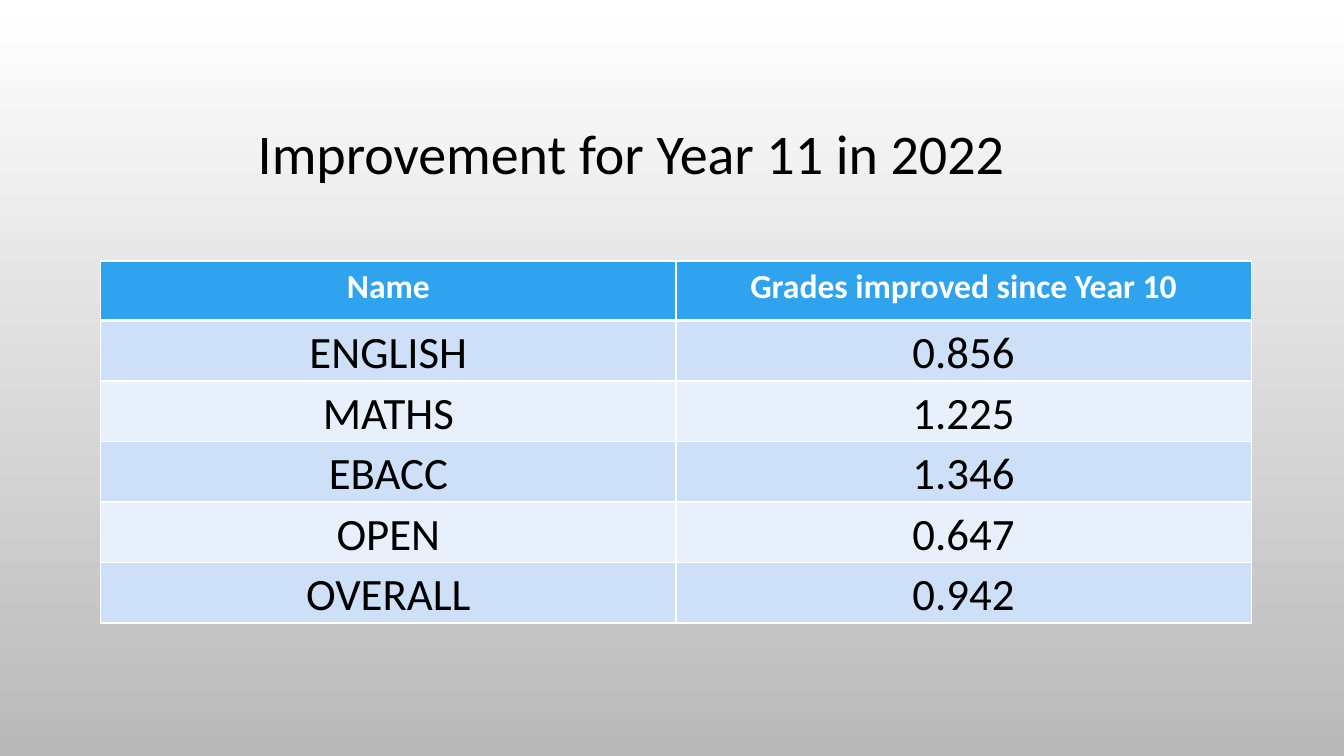
from lxml import etree
from pptx import Presentation
from pptx.dml.color import RGBColor
from pptx.enum import text as t
from pptx.oxml import ns
from pptx.util import Inches, Pt

TITLE = "Improvement for Year 11 in 2022"
ROWS = [
    ("Name", "Grades improved since Year 10"),
    ("ENGLISH", "0.856"),
    ("MATHS", "1.225"),
    ("EBACC", "1.346"),
    ("OPEN", "0.647"),
    ("OVERALL", "0.942"),
]
WHITE = RGBColor(0xFF, 0xFF, 0xFF)
GREY = RGBColor(0xB9, 0xB9, 0xB9)
BLACK = RGBColor(0, 0, 0)
BLUE = RGBColor(0x2F, 0xA3, 0xEE)
BANDS = [RGBColor(0xE8, 0xF0, 0xFC), RGBColor(0xCD, 0xE0, 0xF8)]


def write(frame, words, size, color=BLACK, bold=False):
    para = frame.paragraphs[0]
    para.alignment = t.PP_ALIGN.CENTER
    run = para.add_run()
    run.text = words
    font = run.font
    font.name, font.size, font.bold = "Calibri", Pt(size), bold
    font.color.rgb = color


def edge(cell, side, width):
    props = cell._tc.get_or_add_tcPr()
    line = etree.SubElement(props, ns.qn("a:ln" + side), w=str(Pt(width)))
    fill = etree.SubElement(line, ns.qn("a:solidFill"))
    etree.SubElement(fill, ns.qn("a:srgbClr"), val=str(WHITE))


deck = Presentation()
deck.slide_width, deck.slide_height = Inches(13.33), Inches(7.5)
slide = deck.slides.add_slide(deck.slide_layouts[6])

back = slide.background.fill
back.gradient()
back.gradient_angle = 270
for stop, color in zip(back.gradient_stops, (WHITE, GREY)):
    stop.color.rgb = color

grid = slide.shapes.add_table(
    len(ROWS), 2, Inches(1), Inches(2.59), Inches(11.41), Inches(3.59)
).table
for r, row in enumerate(ROWS):
    head = r == 0
    grid.rows[r].height = Inches(0.59 if head else 0.6)
    for c, words in enumerate(row):
        cell = grid.cell(r, c)
        for side in "LRTB":
            thick = (r, side) in ((0, "B"), (1, "T"))
            edge(cell, side, 3 if thick else 1)
        cell.fill.solid()
        cell.fill.fore_color.rgb = BLUE if head else BANDS[r % 2]
        if head:
            write(cell.text_frame, words, 24, WHITE, True)
        else:
            cell.vertical_anchor = t.MSO_ANCHOR.BOTTOM
            cell.margin_left = cell.margin_right = cell.margin_top = Inches(0.01)
            cell.margin_bottom = 0
            write(cell.text_frame, words, 32)

box = slide.shapes.add_textbox(Inches(1.93), Inches(1.13), Inches(8.66), Inches(0.77))
box.text_frame.word_wrap = True
box.text_frame.auto_size = t.MSO_AUTO_SIZE.SHAPE_TO_FIT_TEXT
write(box.text_frame, TITLE, 40)

deck.save("out.pptx")
